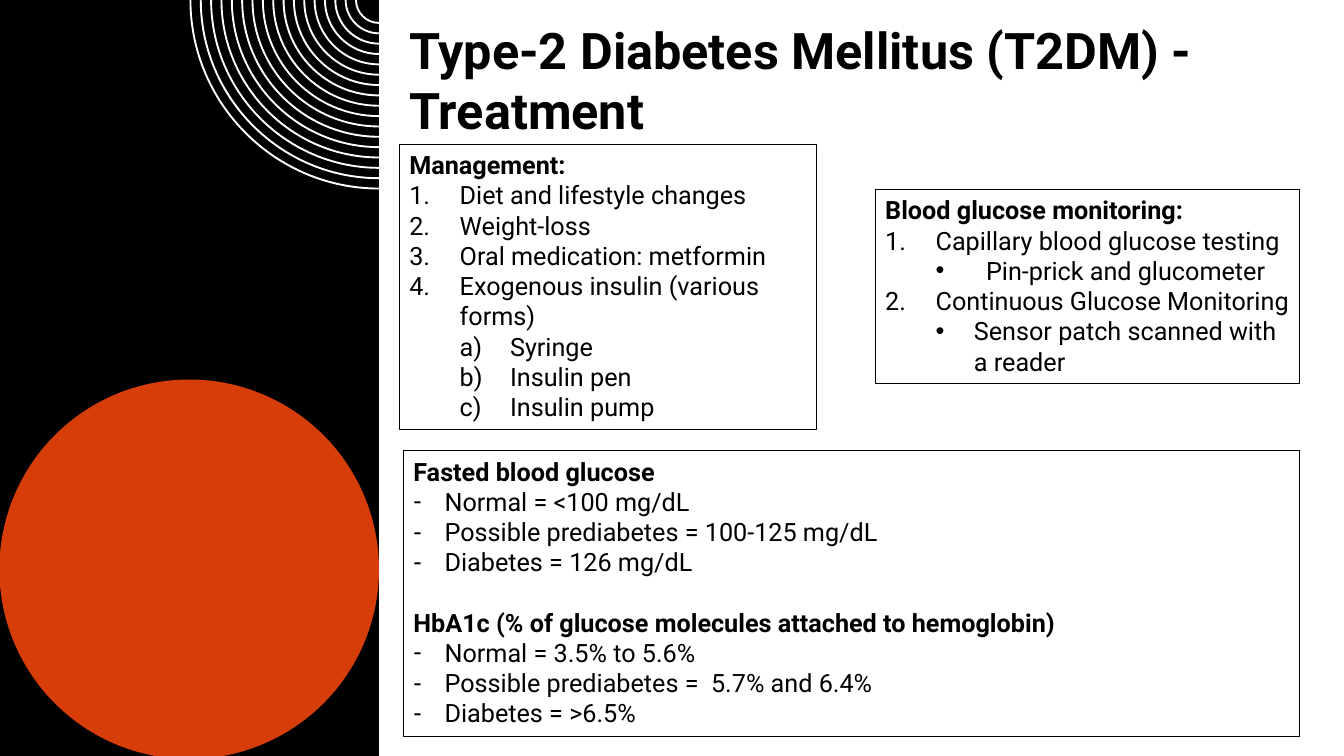
"""Build the slide on the treatment of type-2 diabetes mellitus."""
from lxml.etree import SubElement
from pptx import Presentation
from pptx.dml.color import RGBColor
from pptx.enum.shapes import MSO_SHAPE as Preset
from pptx.enum.text import MSO_ANCHOR as Anchor, MSO_AUTO_SIZE as AutoSize, PP_ALIGN as Align
from pptx.oxml.ns import qn
from pptx.util import Inches, Pt

COLORS = {"ink": "000000", "ring": "FFFFFF", "disc": "D73D09"}
FONT = "Roboto"
WIDTH, HEIGHT = Inches(13.333), Inches(7.5)
PANEL_LEFT, PANEL_RIGHT = -0.05, 28.2
RING_COUNT, RING_RADIUS, RING_STEP, RING_THICKNESS = 17, 14.1, 0.77, 0.14
QUARTER_CURVE = 0.55
BLANK_LINE = 21.5

STYLES = {
    "heading": {"bold": True},
    "heading after gap": {"bold": True, "space_before": BLANK_LINE},
    "number": {"indent": 0.5, "hanging": 0.5, "numbering": "arabicPeriod"},
    "letter": {"level": 1, "indent": 1, "hanging": 0.5, "numbering": "alphaLcParenR"},
    "wide bullet": {"level": 1, "indent": 1, "hanging": 0.5, "bullet": "•"},
    "bullet": {"level": 1, "indent": 0.88, "hanging": 0.38, "bullet": "•"},
    "dash": {"indent": 0.31, "hanging": 0.31, "bullet": "-"},
}

TITLE = [
    ("heading", "Type-2 Diabetes Mellitus (T2DM) -"),
    ("heading", "Treatment"),
]
MANAGEMENT = [
    ("heading", "Management:"),
    ("number", "Diet and lifestyle changes"),
    ("number", "Weight-loss"),
    ("number", "Oral medication: metformin"),
    ("number", "Exogenous insulin (various forms)"),
    ("letter", "Syringe"),
    ("letter", "Insulin pen"),
    ("letter", "Insulin pump"),
]
MONITORING = [
    ("heading", "Blood glucose monitoring:"),
    ("number", "Capillary blood glucose testing"),
    ("wide bullet", "Pin-prick and glucometer"),
    ("number", "Continuous Glucose Monitoring"),
    ("bullet", "Sensor patch scanned with a reader"),
]
THRESHOLDS = [
    ("heading", "Fasted blood glucose"),
    ("dash", "Normal = <100 mg/dL"),
    ("dash", "Possible prediabetes = 100-125 mg/dL"),
    ("dash", "Diabetes = 126 mg/dL"),
    ("heading after gap", "HbA1c (% of glucose molecules attached to hemoglobin)"),
    ("dash", "Normal = 3.5% to 5.6%"),
    ("dash", "Possible prediabetes =  5.7% and 6.4%"),
    ("dash", "Diabetes = >6.5%"),
]


def columns(count):
    """Return the width of a number of hundredths of the slide's width."""
    return round(WIDTH * count / 100)


def rows(count):
    """Return the height of a number of hundredths of the slide's height."""
    return round(HEIGHT * count / 100)


def color(name):
    """Return a named colour."""
    return RGBColor.from_string(COLORS[name])


def paint(shape, fill=None, line=None):
    """Set the fill and outline of a shape and remove its shadow."""
    shape.shadow.inherit = False
    if fill:
        shape.fill.solid()
        shape.fill.fore_color.rgb = color(fill)
    else:
        shape.fill.background()
    if line:
        shape.line.color.rgb = color(line)
        shape.line.width = Pt(0.75)
    else:
        shape.line.fill.background()


def write(paragraph, text, size=18, bold=False, level=0, indent=0, hanging=0,
          bullet=None, numbering=None, space_before=0):
    """Write one formatted paragraph, with a list marker if one is given."""
    run = paragraph.add_run()
    run.text = text
    run.font.name = FONT
    run.font.size = Pt(size)
    run.font.bold = bold
    run.font.color.rgb = color("ink")
    paragraph.alignment = Align.LEFT
    paragraph.level = level
    paragraph.space_before = Pt(space_before)
    properties = paragraph._p.get_or_add_pPr()
    properties.set("marL", str(Inches(indent)))
    properties.set("indent", str(-Inches(hanging)))
    if numbering:
        SubElement(properties, qn("a:buFont"), typeface="+mj-lt")
        SubElement(properties, qn("a:buAutoNum"), type=numbering)
    elif bullet:
        SubElement(properties, qn("a:buFont"), typeface="Arial")
        SubElement(properties, qn("a:buChar"), char=bullet)


def fill_frame(shape, lines, **text_format):
    """Fill a shape with paragraphs given as pairs of style name and text."""
    frame = shape.text_frame
    frame.word_wrap = True
    frame.auto_size = AutoSize.SHAPE_TO_FIT_TEXT
    frame.vertical_anchor = Anchor.TOP
    for index, (style, text) in enumerate(lines):
        paragraph = frame.add_paragraph() if index else frame.paragraphs[0]
        write(paragraph, text, **STYLES[style], **text_format)


def add_block(slide, preset, left, top, width, height, fill=None, line=None):
    """Add a painted preset shape placed in columns and rows."""
    shape = slide.shapes.add_shape(
        preset, columns(left), rows(top), columns(width), rows(height))
    paint(shape, fill, line)
    return shape


def bend(segment, start, end):
    """Turn a straight segment into a quarter circle bulging down and left."""
    corner = min(start[0], end[0]), max(start[1], end[1])
    segment.tag = qn("a:cubicBezTo")
    segment.clear()
    handles = [[round(p + QUARTER_CURVE * (c - p)) for p, c in zip(point, corner)]
               for point in (start, end)]
    for x, y in (*handles, end):
        SubElement(segment, qn("a:pt"), x=str(x), y=str(y))


def add_rings(slide):
    """Add the quarter rings around the panel's top right corner."""
    center = columns(PANEL_RIGHT)
    builder = slide.shapes.build_freeform(center - columns(RING_RADIUS), 0)
    for index in range(RING_COUNT):
        radius = RING_RADIUS - index * RING_STEP
        outer, inner = columns(radius), columns(radius - RING_THICKNESS)
        if index:
            builder.move_to(center - outer, 0)
        builder.add_line_segments(
            [(center - inner, 0), (center, inner), (center, outer), (center - outer, 0)],
            close=True)
    rings = builder.convert_to_shape()
    paint(rings, fill="ring")
    segments = list(rings._element.iter(qn("a:lnTo")))
    points = [(int(segment[0].get("x")), int(segment[0].get("y"))) for segment in segments]
    for index in range(1, len(segments), 2):
        bend(segments[index], points[index - 1], points[index])


def main():
    """Build and save the slide."""
    presentation = Presentation()
    presentation.slide_width, presentation.slide_height = WIDTH, HEIGHT
    slide = presentation.slides.add_slide(presentation.slide_layouts[6])

    panel_width = PANEL_RIGHT - PANEL_LEFT
    add_block(slide, Preset.RECTANGLE, PANEL_LEFT, 0, panel_width, 100, fill="ink")
    add_rings(slide)
    add_block(slide, Preset.OVAL, PANEL_LEFT, 50.2, panel_width, 50.2, fill="disc")

    title = slide.shapes.add_textbox(columns(29.72), rows(1.87), columns(67.8), rows(17.47))
    fill_frame(title, TITLE, size=36)
    for lines, place in (
        (MANAGEMENT, (29.72, 19.13, 31.07, 37.73)),
        (MONITORING, (65.13, 25.09, 31.56, 25.6)),
        (THRESHOLDS, (30.02, 59.65, 66.67, 37.73)),
    ):
        fill_frame(add_block(slide, Preset.RECTANGLE, *place, line="ink"), lines)
    presentation.save("out.pptx")


if __name__ == "__main__":
    main()
